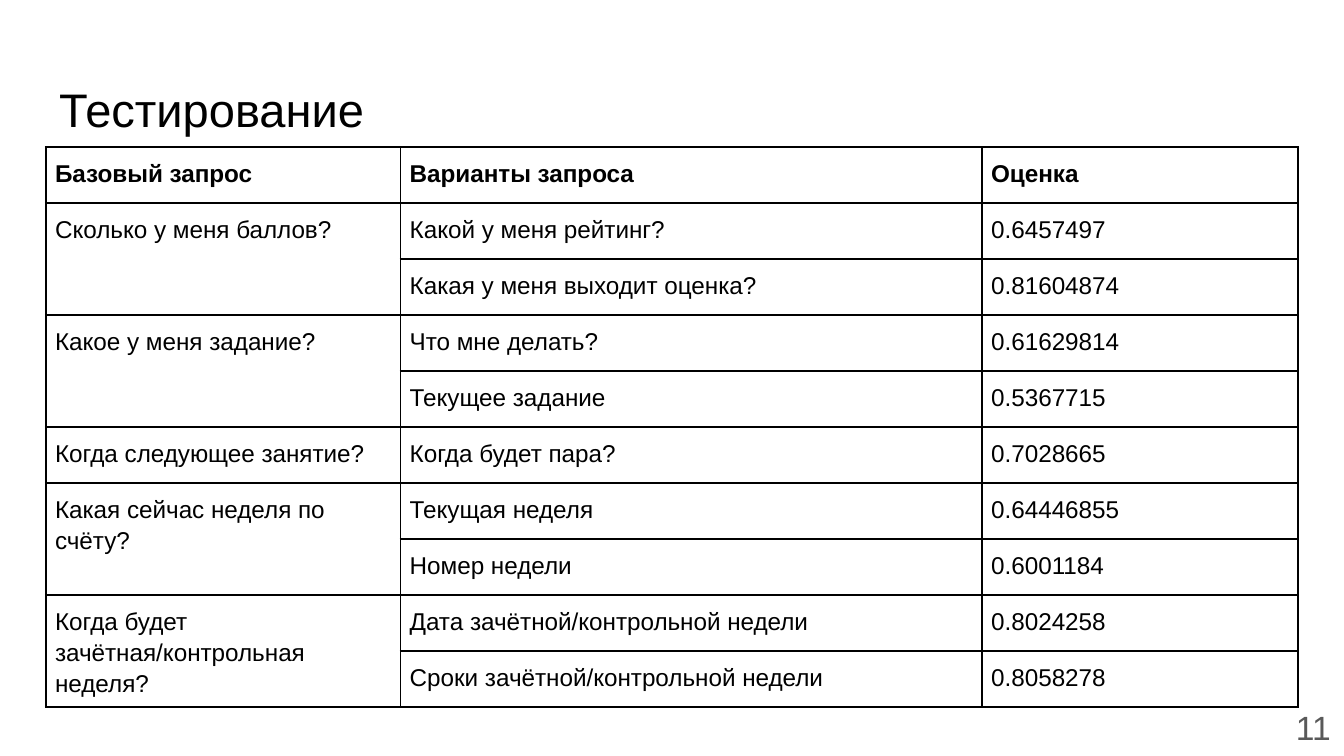
from dataclasses import dataclass

import pptx
import pptx.dml.color
import pptx.enum.text
import pptx.oxml
import pptx.oxml.ns
import pptx.util

Pt = pptx.util.Pt
ANCHOR = pptx.enum.text.MSO_ANCHOR
ALIGN = pptx.enum.text.PP_ALIGN

BLACK = pptx.dml.color.RGBColor(0x00, 0x00, 0x00)
GRAY = pptx.dml.color.RGBColor(0x59, 0x59, 0x59)
FONT = "Arial"
COLUMN_WIDTHS = (190, 311.5, 169.5)
ROW_HEIGHT = 30
CELL_MARGIN = 5.04
BOX_MARGIN = 7.2


@dataclass(frozen=True)
class Variant:
    text: str
    score: str


@dataclass(frozen=True)
class Query:
    text: str
    variants: tuple[Variant, ...]


HEADERS = ("Базовый запрос", "Варианты запроса", "Оценка")
QUERIES = (
    Query("Сколько у меня баллов?", (
        Variant("Какой у меня рейтинг?", "0.6457497"),
        Variant("Какая у меня выходит оценка?", "0.81604874"),
    )),
    Query("Какое у меня задание?", (
        Variant("Что мне делать?", "0.61629814"),
        Variant("Текущее задание", "0.5367715"),
    )),
    Query("Когда следующее занятие?", (
        Variant("Когда будет пара?", "0.7028665"),
    )),
    Query("Какая сейчас неделя по счёту?", (
        Variant("Текущая неделя", "0.64446855"),
        Variant("Номер недели", "0.6001184"),
    )),
    Query("Когда будет зачётная/контрольная неделя?", (
        Variant("Дата зачётной/контрольной недели", "0.8024258"),
        Variant("Сроки зачётной/контрольной недели", "0.8058278"),
    )),
)


def set_attributes(target, values: dict) -> None:
    for name, value in values.items():
        setattr(target, name, value)


def set_margins(target, margin: float) -> None:
    sides = ("left", "top", "right", "bottom")
    set_attributes(target, {f"margin_{side}": Pt(margin) for side in sides})


def write_text(text_frame, text: str, size: float, color, paragraph_format: dict,
               bold: bool = False) -> None:
    paragraph = text_frame.paragraphs[0]
    set_attributes(paragraph, paragraph_format)
    run = paragraph.add_run()
    run.text = text
    set_attributes(run.font, {"name": FONT, "size": Pt(size), "bold": bold})
    run.font.color.rgb = color


def fill_box(shape, text: str, size: float, color, alignment) -> None:
    text_frame = shape.text_frame
    set_margins(text_frame, BOX_MARGIN)
    set_attributes(text_frame, {
        "word_wrap": True,
        "auto_size": pptx.enum.text.MSO_AUTO_SIZE.NONE,
        "vertical_anchor": ANCHOR.MIDDLE,
    })
    write_text(text_frame, text, size, color, {"alignment": alignment})


def add_borders(cell) -> None:
    properties = cell._tc.get_or_add_tcPr()
    for index, side in enumerate(("lnL", "lnR", "lnT", "lnB")):
        line = pptx.oxml.parse_xml(
            f'<a:{side} {pptx.oxml.ns.nsdecls("a")} w="{Pt(1)}">'
            f'<a:solidFill><a:srgbClr val="{BLACK}"/></a:solidFill></a:{side}>'
        )
        properties.insert(index, line)


def write_cell(cell, text: str, bold: bool = False) -> None:
    cell.vertical_anchor = ANCHOR.TOP
    paragraph_format = {
        "line_spacing": 1.15,
        "space_before": Pt(12),
        "space_after": Pt(12),
    }
    write_text(cell.text_frame, text, 13, BLACK, paragraph_format, bold)


def add_query_table(slide) -> None:
    row_count = 1 + sum(len(query.variants) for query in QUERIES)
    table = slide.shapes.add_table(
        row_count, len(HEADERS), Pt(24.5), Pt(78.75),
        Pt(sum(COLUMN_WIDTHS)), Pt(ROW_HEIGHT * row_count),
    ).table
    set_attributes(table, {"first_row": False, "horz_banding": False})
    for column, width in zip(table.columns, COLUMN_WIDTHS):
        column.width = Pt(width)
    for row in table.rows:
        row.height = Pt(ROW_HEIGHT)
        for cell in row.cells:
            set_margins(cell, CELL_MARGIN)
            cell.fill.background()
            add_borders(cell)

    for column_index, header in enumerate(HEADERS):
        write_cell(table.cell(0, column_index), header, bold=True)
    first_row = 1
    for query in QUERIES:
        last_row = first_row + len(query.variants) - 1
        query_cell = table.cell(first_row, 0)
        if last_row > first_row:
            query_cell.merge(table.cell(last_row, 0))
        write_cell(query_cell, query.text)
        for row_index, variant in enumerate(query.variants, first_row):
            write_cell(table.cell(row_index, 1), variant.text)
            write_cell(table.cell(row_index, 2), variant.score)
        first_row = last_row + 1


def main() -> None:
    presentation = pptx.Presentation()
    set_attributes(presentation, {"slide_width": Pt(720), "slide_height": Pt(405)})
    slide = presentation.slides.add_slide(presentation.slide_layouts[5])

    title = slide.shapes.title
    set_attributes(title, {
        "left": Pt(24.5), "top": Pt(35.5), "width": Pt(671), "height": Pt(45),
    })
    fill_box(title, "Тестирование", 25.2, BLACK, ALIGN.LEFT)
    add_query_table(slide)
    page_number = slide.shapes.add_textbox(Pt(677), Pt(374), Pt(43), Pt(31))
    fill_box(page_number, "11", 18, GRAY, ALIGN.RIGHT)

    presentation.save("out.pptx")


if __name__ == "__main__":
    main()
